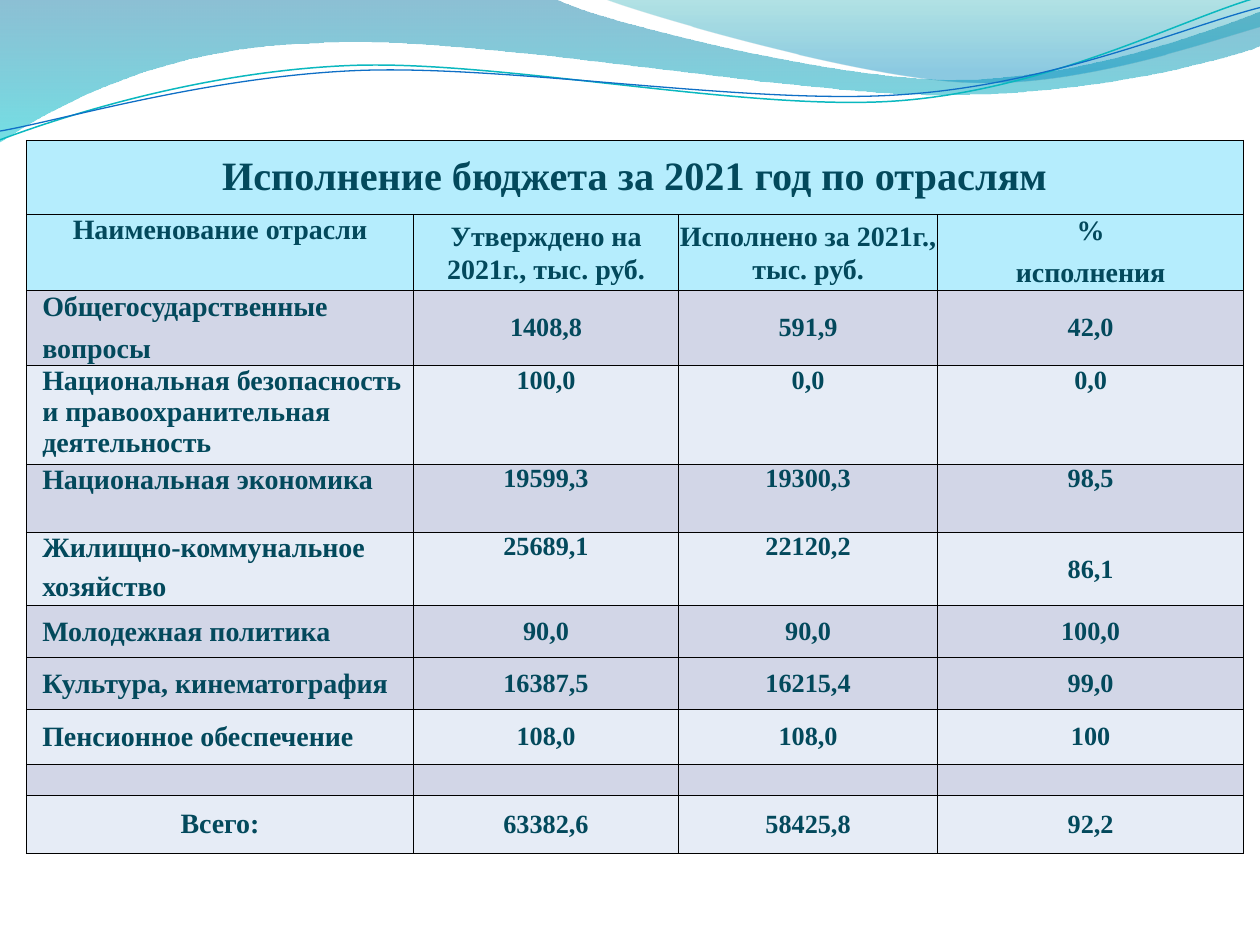
import dataclasses
import math

import lxml.etree
import pptx
import pptx.dml.color
import pptx.enum.text
import pptx.oxml.ns
import pptx.util

qn = pptx.oxml.ns.qn
Pt = pptx.util.Pt
RGB = pptx.dml.color.RGBColor.from_string
MID = pptx.enum.text.MSO_ANCHOR.MIDDLE
TOP = pptx.enum.text.MSO_ANCHOR.TOP
LEFT = pptx.enum.text.PP_ALIGN.LEFT
CENTER = pptx.enum.text.PP_ALIGN.CENTER


@dataclasses.dataclass(frozen=True)
class Theme:
    font: str = "Times New Roman"
    ink: str = "03495C"
    head: str = "B5EDFD"
    dark: str = "D2D6E7"
    light: str = "E6ECF6"
    edge: str = "000000"
    title: float = 23
    label: float = 16
    value: float = 15
    blank: float = 10
    thin: float = 0.5
    thick: float = 1
    sky: tuple = ((0, "0074A1", 45), (1, "00C6CF", 55))
    sea: tuple = ((0, "00A1A9", 30), (0.8, "008BBF", 45))
    teal: str = "0AB8BF"
    blue: str = "0F6FC6"


class Deck:
    COLS = 1000
    TILT = 2.7

    def __init__(self, theme):
        self.theme = theme
        self.file = pptx.Presentation()
        self.file.slide_width = pptx.util.Inches(10)
        self.file.slide_height = pptx.util.Inches(7.5)
        self.slide = self.file.slides.add_slide(self.file.slide_layouts[6])
        self.unit = self.file.slide_width / self.COLS

    def size(self, count):
        return pptx.util.Emu(round(count * self.unit))

    def shape(self, start, parts, close):
        spots = [part[i:i + 2] for part in parts for i in range(0, len(part), 2)]
        pen = self.slide.shapes.build_freeform(
            self.size(start[0]), self.size(start[1]), scale=1.0)
        pen.add_line_segments([(self.size(x), self.size(y)) for x, y in spots], close=close)
        form = pen.convert_to_shape()
        form.shadow.inherit = False
        lines = iter(list(form._element.iter(qn("a:lnTo"))))
        for part in parts:
            first = next(lines)
            if len(part) == 6:
                first.tag = qn("a:cubicBezTo")
                for line in (next(lines), next(lines)):
                    first.append(line[0])
                    line.getparent().remove(line)
        return form

    def wave(self, start, parts, stops):
        form = self.shape(start, parts, True)
        form.line.fill.background()
        form.fill.gradient()
        form.fill.gradient_angle = 270
        for stop, (place, color, alpha) in zip(form.fill.gradient_stops, stops):
            stop.position = place
            stop.color.rgb = RGB(color)
        fills = form._element.spPr.find(qn("a:gradFill")).iter(qn("a:srgbClr"))
        for node, (place, color, alpha) in zip(fills, stops):
            lxml.etree.SubElement(node, qn("a:alpha"), val=str(alpha * 1000))

    def level(self, part, pivot):
        turn = math.radians(self.TILT)
        flat = []
        for i in range(0, len(part), 2):
            x, y = part[i] - pivot[0], part[i + 1] - pivot[1]
            flat += [pivot[0] + x * math.cos(turn) - y * math.sin(turn),
                     pivot[1] + x * math.sin(turn) + y * math.cos(turn)]
        return flat

    def curve(self, start, parts, pivot, color, width):
        form = self.shape(self.level(start, pivot),
                          [self.level(part, pivot) for part in parts], False)
        form.rotation = -self.TILT
        form.fill.background()
        form.line.color.rgb = RGB(color)
        form.line.width = Pt(width)

    def table(self, left, top, cols, rows):
        frame = self.slide.shapes.add_table(
            len(rows), len(cols), self.size(left), self.size(top),
            self.size(sum(cols)), self.size(sum(rows)))
        grid = frame.table
        grid.first_row = grid.horz_banding = False
        for col, width in zip(grid.columns, cols):
            col.width = self.size(width)
        for row, height in zip(grid.rows, rows):
            row.height = self.size(height)
        return grid

    def cell(self, cell, text, size, fill, edges, anchor=MID, align=CENTER,
             inset=0, gap=0, pitch=None):
        cell.margin_left = self.size(inset)
        cell.margin_right = cell.margin_top = cell.margin_bottom = 0
        cell.vertical_anchor = anchor
        cell.text_frame.text = text
        paras = cell.text_frame.paragraphs
        for para in paras:
            para.alignment = align
            if pitch:
                para.line_spacing = Pt(pitch)
            if para is not paras[-1]:
                para.space_after = Pt(gap)
            for run in para.runs:
                run.font.name = self.theme.font
                run.font.size = Pt(size)
                run.font.bold = True
                run.font.color.rgb = RGB(self.theme.ink)
            if not text:
                lxml.etree.SubElement(para._p, qn("a:endParaRPr"), sz=str(int(size * 100)))
        self.border(cell, edges)
        cell.fill.solid()
        cell.fill.fore_color.rgb = RGB(fill)

    def border(self, cell, edges):
        props = cell._tc.get_or_add_tcPr()
        for side, width in zip("LRTB", edges):
            line = lxml.etree.SubElement(props, qn("a:ln" + side), w=str(Pt(width)))
            solid = lxml.etree.SubElement(line, qn("a:solidFill"))
            lxml.etree.SubElement(solid, qn("a:srgbClr"), val=self.theme.edge)

    def save(self):
        self.file.save("out.pptx")


ROWS = [
    ("Исполнение бюджета за 2021 год по отраслям",),
    ("Наименование отрасли", "Утверждено на 2021г., тыс. руб.",
     "Исполнено за 2021г., тыс. руб.", "%\nисполнения"),
    ("Общегосударственные\nвопросы", "1408,8", "591,9", "42,0"),
    ("Национальная безопасность и правоохранительная деятельность", "100,0", "0,0", "0,0"),
    ("Национальная экономика", "19599,3", "19300,3", "98,5"),
    ("Жилищно-коммунальное\nхозяйство", "25689,1", "22120,2", "86,1"),
    ("Молодежная политика", "90,0", "90,0", "100,0"),
    ("Культура, кинематография", "16387,5", "16215,4", "99,0"),
    ("Пенсионное обеспечение", "108,0", "108,0", "100"),
    ("", "", "", ""),
    ("Всего:", "63382,6", "58425,8", "92,2"),
]
HEIGHTS = [59, 60, 60, 78.5, 54, 58, 41.3, 41.4, 43, 24.8, 46.4]
WIDTHS = [307, 210.5, 205.5, 243]
HEAVY = {3, 5, 6, 10}
HIGH = {(1, 0), (5, 0), (5, 1), (5, 2)} | {(r, c) for r in (3, 4) for c in range(4)}


def budget(deck):
    look = deck.theme
    fills = [look.head] * 2 + [look.dark, look.light] * 2 + [look.dark]
    fills += [look.dark, look.light] * 2
    grid = deck.table(21.2, 111.3, WIDTHS, HEIGHTS)
    grid.cell(0, 0).merge(grid.cell(0, 3))
    for r, row in enumerate(ROWS):
        for c, text in enumerate(row):
            size = look.label if r == 1 or c == 0 else look.value
            size = look.title if r == 0 else size if text else look.blank
            name = c == 0 and 2 <= r <= 8
            last = c == len(row) - 1
            edges = [look.thick if heavy else look.thin
                     for heavy in (c == 0, last, r - 1 in HEAVY, r in HEAVY)]
            deck.cell(grid.cell(r, c), text, size, fills[r], edges,
                      anchor=TOP if (r, c) in HIGH else MID,
                      align=LEFT if name else CENTER, inset=12.4 if name else 0,
                      gap=4.2 if r == 5 else 6.3,
                      pitch=19.2 if r == 1 and c in (1, 2) else None)


def main():
    look = Theme()
    deck = Deck(look)
    deck.wave((0, 0), [
        (440, -1), (476, 17, 664, 63, 758, 63), (853, 63, 958, 26, 1000, 9), (1001, 36),
        (983, 44, 870, 76, 746, 75), (622, 75, 382, 28, 257, 34),
        (129, 36, 46, 83, -1, 113), (0, 0)], look.sky)
    deck.wave((479, -1), [
        (509, 11, 682, 62, 769, 65), (856, 69, 961, 32, 1000, 21),
        (1000, 0), (479, -1)], look.sea)
    deck.curve((0, 111), [
        (48, 93, 158, 57, 277, 52), (395, 47, 593, 89, 713, 80),
        (833, 71, 938, 15, 998, -2)], (499, 57.5), look.teal, 0.85)
    deck.curve((0, 104), [
        (47, 96, 164, 61, 283, 56), (403, 51, 597, 84, 717, 75),
        (836, 67, 941, 21, 1000, 6)], (499.5, 59), look.blue, 0.75)
    budget(deck)
    deck.save()


if __name__ == "__main__":
    main()
